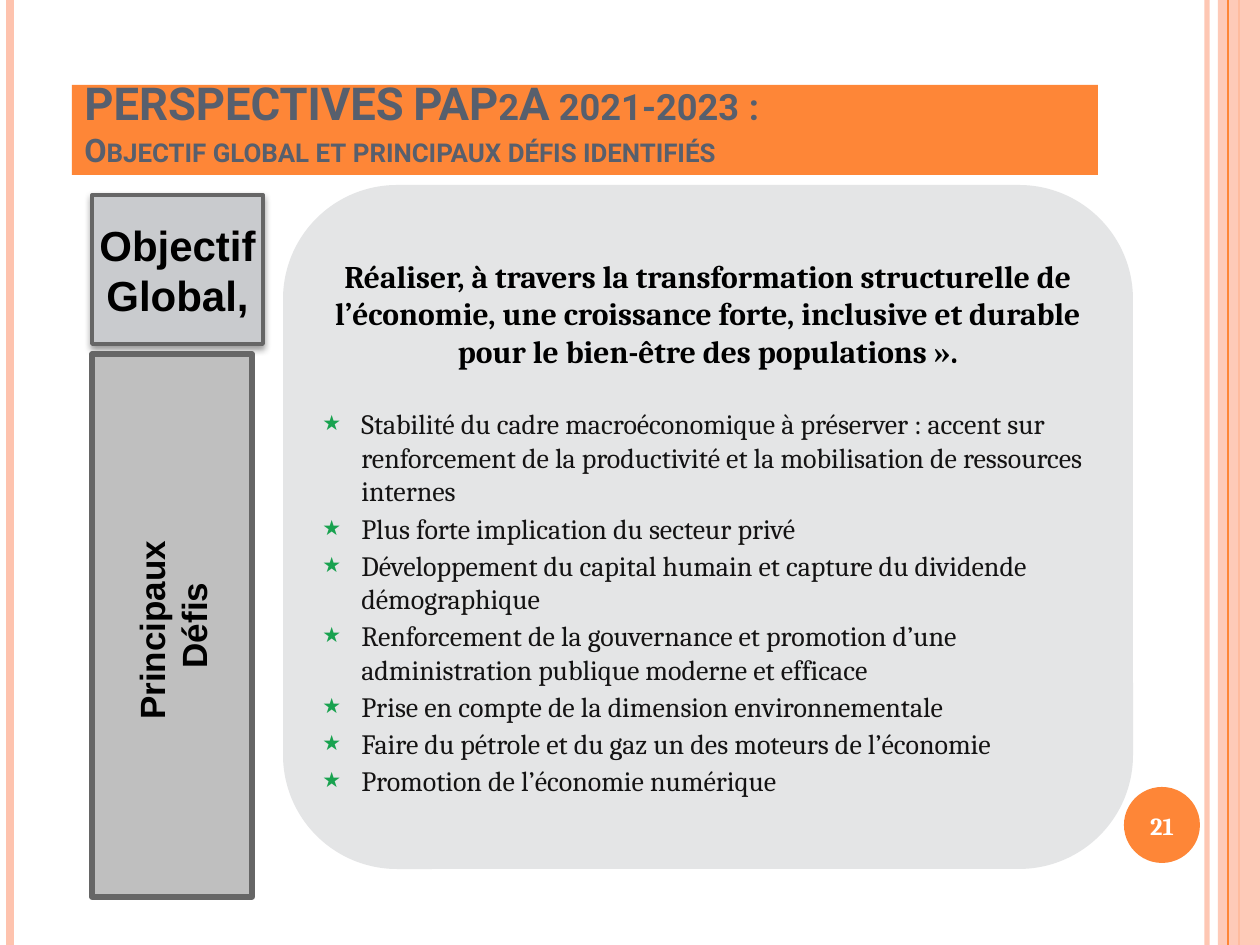
from lxml import etree
from pptx import Presentation
from pptx.dml.color import RGBColor
from pptx.enum.shapes import MSO_CONNECTOR, MSO_SHAPE
from pptx.enum.text import MSO_ANCHOR, PP_ALIGN
from pptx.oxml.ns import qn
from pptx.util import Emu, Pt

SCALE = 914400 / 126  # EMU per px
RECT, ROUND, OVAL = MSO_SHAPE.RECTANGLE, MSO_SHAPE.ROUNDED_RECTANGLE, MSO_SHAPE.OVAL
STRAIGHT = MSO_CONNECTOR.STRAIGHT
MIDDLE, BOTTOM = MSO_ANCHOR.MIDDLE, MSO_ANCHOR.BOTTOM
LEFT, CENTER = PP_ALIGN.LEFT, PP_ALIGN.CENTER

ORANGE = RGBColor(0xFE, 0x86, 0x37)
PEACH = RGBColor(0xFE, 0xC3, 0xAE)
SLATE = RGBColor(0x57, 0x5F, 0x6D)
SILVER = RGBColor(0xC9, 0xCB, 0xCE)
GREY = RGBColor(0xBF, 0xBF, 0xBF)
DARK_GREY = RGBColor(0x66, 0x66, 0x66)
PANEL = RGBColor(0xE4, 0xE5, 0xE6)
INK = RGBColor(0x14, 0x13, 0x13)
GREEN = RGBColor(0x18, 0xA2, 0x4F)
BLACK = RGBColor(0, 0, 0)
WHITE = RGBColor(0xFF, 0xFF, 0xFF)

WIDTH, HEIGHT = 1260, 945

TITLE = [("PERSPECTIVES PAP2A 2021-2023 : ", 25.9),
         ("Objectif global et principaux défis identifiés", 18.5)]
OBJECTIVE = ("Réaliser, à travers la transformation structurelle de l’économie, "
             "une croissance forte, inclusive et durable pour le bien-être des "
             "populations ».")
CHALLENGES = [
    "Stabilité du cadre macroéconomique à préserver : accent sur renforcement "
    "de la productivité et la mobilisation de ressources internes",
    "Plus forte implication du secteur privé",
    "Développement du capital humain et capture du dividende démographique",
    "Renforcement de la gouvernance et promotion d’une administration publique "
    "moderne et efficace",
    "Prise en compte de la dimension environnementale",
    "Faire du pétrole et du gaz un des moteurs de l’économie",
    "Promotion de l’économie numérique",
]


def px(n):
    return Emu(round(n * SCALE))


def add_xml(parent, tag, **attrs):
    return etree.SubElement(parent, qn(tag), {k: str(v) for k, v in attrs.items()})


def set_alpha(fill, percent):
    color = next(fill.iter(qn("a:srgbClr")))
    add_xml(color, "a:alpha", val=percent * 1000)


class SlideBuilder:
    def __init__(self, slide):
        self.shapes = slide.shapes

    def rule(self, x, color, weight, alpha=None):
        """Draw a vertical line over the full slide height."""
        line = self.shapes.add_connector(STRAIGHT, px(x), 0, px(x), px(HEIGHT))
        line.line.color.rgb = color
        line.line.width = Pt(weight)
        if alpha:
            set_alpha(line.line._ln, alpha)
        add_xml(line._element.spPr, "a:effectLst")

    def box(self, kind, x, y, w, h, fill, line=None, weight=0, alpha=None):
        sp = self.shapes.add_shape(kind, px(x), px(y), px(w), px(h))
        sp.fill.solid()
        sp.fill.fore_color.rgb = fill
        if alpha:
            set_alpha(sp._element.spPr, alpha)
        if line is None:
            sp.line.fill.background()
        else:
            sp.line.color.rgb = line
            sp.line.width = Pt(weight)
        sp.shadow.inherit = False
        return sp

    def drop_shadow(self, sp):
        effects = sp._element.spPr.find(qn("a:effectLst"))
        shadow = add_xml(effects, "a:outerShdw", blurRad=Pt(4), dist=Pt(2),
                         dir=90 * 60000, rotWithShape=0)
        set_alpha_color = add_xml(shadow, "a:srgbClr", val=BLACK)
        add_xml(set_alpha_color, "a:alpha", val=40000)

    def frame(self, sp, inset=None, anchor=MIDDLE):
        tf = sp.text_frame
        tf.word_wrap = True
        tf.vertical_anchor = anchor
        if inset is not None:
            tf.margin_left = tf.margin_right = px(inset)
            tf.margin_top = tf.margin_bottom = px(inset)
        return tf

    def style(self, p, size, color, font="Cambria", bold=True, align=CENTER):
        p.alignment = align
        p.font.name = font
        p.font.size = Pt(size)
        p.font.bold = bold
        p.font.color.rgb = color

    def paragraphs(self, tf, lines, size, color, font="Cambria"):
        for i, line in enumerate(lines):
            p = tf.add_paragraph() if i else tf.paragraphs[0]
            p.text = line
            self.style(p, size, color, font)

    def bullet(self, tf, text):
        p = tf.add_paragraph()
        p.text = text
        self.style(p, 16, INK, bold=False, align=LEFT)
        p.space_after = Pt(2)
        props = p._p.get_or_add_pPr()
        props.set("marL", str(px(39)))
        props.set("indent", str(px(-39)))
        marks = [add_xml(props, "a:buClr"), add_xml(props, "a:buSzPct", val=75000),
                 add_xml(props, "a:buFont", typeface="Arial"),
                 add_xml(props, "a:buChar", char="★")]
        add_xml(marks[0], "a:srgbClr", val=GREEN)
        props.find(qn("a:defRPr")).addprevious(marks[0])
        for before, mark in zip(marks, marks[1:]):
            before.addnext(mark)

    def title(self, sp, lines):
        p = self.frame(sp, anchor=BOTTOM).paragraphs[0]
        p.alignment = LEFT
        for i, (text, size) in enumerate(lines):
            if i:
                p.add_line_break()
            r = p.add_run()
            r.text = text
            r.font.name = "Roboto"
            r.font.size = Pt(size)
            r.font.bold = True
            r.font.color.rgb = SLATE
            r._r.get_or_add_rPr().set("cap", "small")


def main():
    prs = Presentation()
    prs.slide_width, prs.slide_height = px(WIDTH), px(HEIGHT)
    s = SlideBuilder(prs.slides.add_slide(prs.slide_layouts[6]))

    # Margin decoration and page number
    s.rule(1207, PEACH, 3, alpha=93)
    s.rule(10, PEACH, 4.5)
    s.rule(1239, ORANGE, 1.5)
    s.box(RECT, 1218, 0, 42, HEIGHT, PEACH, alpha=87)
    s.rule(1228, ORANGE, 0.75)
    s.box(OVAL, 1124, 787, 76, 76, ORANGE)
    number = s.shapes.add_textbox(px(1120), px(790), px(84), px(72))
    s.paragraphs(s.frame(number), ["21"], 14, WHITE)

    s.title(s.box(RECT, 72, 85, 1026, 90, ORANGE), TITLE)

    # Row labels
    goal = s.box(RECT, 92, 195, 171, 149, SILVER, DARK_GREY, 2.25)
    s.drop_shadow(goal)
    s.paragraphs(s.frame(goal, 5), ["Objectif ", "Global,"], 24, BLACK, "Arial")
    challenges = s.box(RECT, 92, 354, 160, 543, GREY, DARK_GREY, 3)
    tf = s.frame(challenges, 5)
    tf._txBody.bodyPr.set("vert", "vert270")
    s.paragraphs(tf, ["Principaux ", "Défis"], 20, BLACK, "Arial")

    # Objective and challenges
    tf = s.frame(s.box(ROUND, 283, 185, 850, 684, PANEL), 6)
    s.paragraphs(tf, [OBJECTIVE], 18, BLACK)
    tf.paragraphs[0].space_after = Pt(21)
    for text in CHALLENGES:
        s.bullet(tf, text)

    prs.save("out.pptx")


if __name__ == "__main__":
    main()
